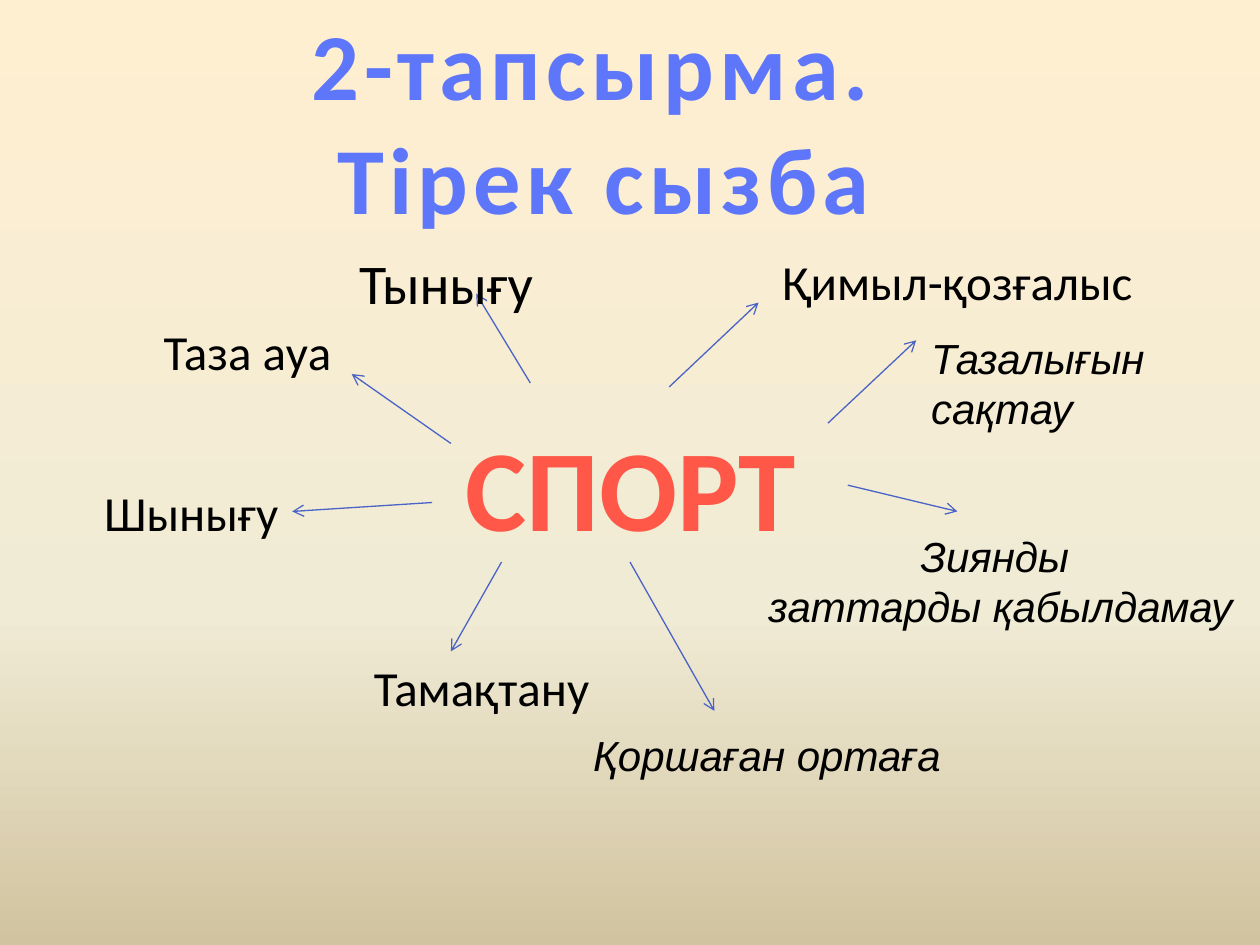
from dataclasses import dataclass

from lxml import etree
from pptx import Presentation
from pptx.dml.color import RGBColor
from pptx.enum.shapes import MSO_CONNECTOR
from pptx.enum.text import MSO_AUTO_SIZE, PP_ALIGN
from pptx.oxml.ns import qn
from pptx.util import Cm, Pt

STRAIGHT = MSO_CONNECTOR.STRAIGHT
FIT_SHAPE = MSO_AUTO_SIZE.SHAPE_TO_FIT_TEXT
LEFT, CENTER = PP_ALIGN.LEFT, PP_ALIGN.CENTER


@dataclass(frozen=True)
class Theme:
    background = ((0, "FFEFD1"), (65, "F0EBD5"), (100, "D1C39F"))
    title_fill = ((10, "5E76F9"), (75, "233FAB"))
    topic_fill = ((0, "FF6155"), (25, "FF5748"), (50, "EF3718"),
                  (75, "FF5748"), (100, "FF6155"))
    title_outline = "F4F5FA"
    arrow = RGBColor.from_string("4963C7")
    ink = RGBColor.from_string("000000")
    arrow_width = Pt(0.75)
    outline_width = Pt(0.9)
    title_spacing = Pt(3)
    title = {"name": "Calibri", "size": Pt(54), "bold": True}
    topic = {"name": "Calibri", "size": Pt(66), "bold": True}
    label = {"name": "Calibri", "size": Pt(28)}
    large_label = {"name": "Calibri", "size": Pt(32)}
    rule = {"name": "Arial", "size": Pt(24), "italic": True}


THEME = Theme()

# text, (left, top, width, height), format, alignment, wrapping
LABELS = (
    ("Шынығу", (1.85, 9.6, 4.06, 1.45), THEME.label, LEFT, False),
    ("Тамақтану", (7.29, 13.13, 4.9, 1.45), THEME.label, LEFT, False),
    ("Таза ауа", (3.05, 6.35, 3.94, 1.45), THEME.label, LEFT, False),
    ("Тынығу", (6.99, 4.88, 4.06, 1.63), THEME.large_label, LEFT, False),
    ("Қимыл-қозғалыс", (15.52, 4.95, 7.67, 1.45), THEME.label, LEFT, False),
    ("Тазалығын\nсақтау", (18.52, 6.58, 5.11, 2.31), THEME.rule, LEFT, False),
    ("Қоршаған ортаға", (11.71, 14.58, 7.59, 1.27), THEME.rule, LEFT, False),
    ("Зиянды \nзаттарды қабылдамау", (15.14, 10.57, 10.06, 2.31),
     THEME.rule, CENTER, True),
)

# from x, from y, to x, to y
ARROWS = (
    (12.7, 11.33, 14.4, 14.33),
    (17.09, 9.78, 19.3, 10.31),
    (13.49, 7.8, 15.29, 6.1),
    (9.09, 8.94, 7.09, 7.54),
    (8.71, 10.13, 5.89, 10.31),
    (10.11, 11.33, 9.09, 13.13),
    (10.69, 7.72, 9.6, 5.92),
    (16.69, 8.53, 18.47, 6.86),
)


def add_color(parent, color):
    etree.SubElement(parent, qn("a:srgbClr"), val=color)


def set_gradient(fill, owner, stops):
    """Give the fill inside the owner element a downward gradient."""
    fill.gradient()
    fill.gradient_angle = 270
    stop_list = next(owner.iter(qn("a:gsLst")))
    for old_stop in list(stop_list):
        stop_list.remove(old_stop)
    for percent, color in stops:
        stop = etree.SubElement(stop_list, qn("a:gs"), pos=str(percent * 1000))
        add_color(stop, color)


def add_text(slide, text, box, text_format, align=CENTER, wrap=False):
    """Add a text box and return its runs, one for each paragraph."""
    frame = slide.shapes.add_textbox(*map(Cm, box)).text_frame
    frame.text = text
    frame.word_wrap = wrap
    frame.auto_size = FIT_SHAPE
    runs = []
    for paragraph in frame.paragraphs:
        paragraph.alignment = align
        run = paragraph.runs[0]
        for attribute, value in text_format.items():
            setattr(run.font, attribute, value)
        runs.append(run)
    return runs


def add_heading(slide, text, box, text_format, stops):
    runs = add_text(slide, text, box, text_format)
    for run in runs:
        set_gradient(run.font.fill, run.font._element, stops)
    return runs


def outline_and_space(run):
    """Outline the letters and widen the gaps between them."""
    properties = run.font._element
    properties.set("spc", str(int(THEME.title_spacing.pt * 100)))
    outline = etree.Element(qn("a:ln"), w=str(THEME.outline_width))
    add_color(etree.SubElement(outline, qn("a:solidFill")), THEME.title_outline)
    properties.insert(0, outline)


def add_label(slide, text, box, text_format, align, wrap):
    for run in add_text(slide, text, box, text_format, align, wrap):
        run.font.color.rgb = THEME.ink


def add_arrow(slide, *ends):
    arrow = slide.shapes.add_connector(STRAIGHT, *map(Cm, ends))
    arrow.line.color.rgb = THEME.arrow
    arrow.line.width = THEME.arrow_width
    etree.SubElement(arrow.line._get_or_add_ln(), qn("a:tailEnd"), type="arrow")
    etree.SubElement(arrow._element.spPr, qn("a:effectLst"))


def main():
    presentation = Presentation()
    presentation.slide_width, presentation.slide_height = Cm(25.4), Cm(19.05)
    slide = presentation.slides.add_slide(presentation.slide_layouts[6])
    set_gradient(slide.background.fill, slide._element, THEME.background)

    title_runs = add_heading(slide, "2-тапсырма. \nТірек сызба",
                             (5.89, 0, 12.57, 4.88), THEME.title, THEME.title_fill)
    for run in title_runs:
        outline_and_space(run)
    add_heading(slide, "СПОРТ", (9.09, 8.26, 7.24, 3.07),
                THEME.topic, THEME.topic_fill)
    for ends in ARROWS:
        add_arrow(slide, *ends)
    for label in LABELS:
        add_label(slide, *label)

    presentation.save("out.pptx")


if __name__ == "__main__":
    main()
